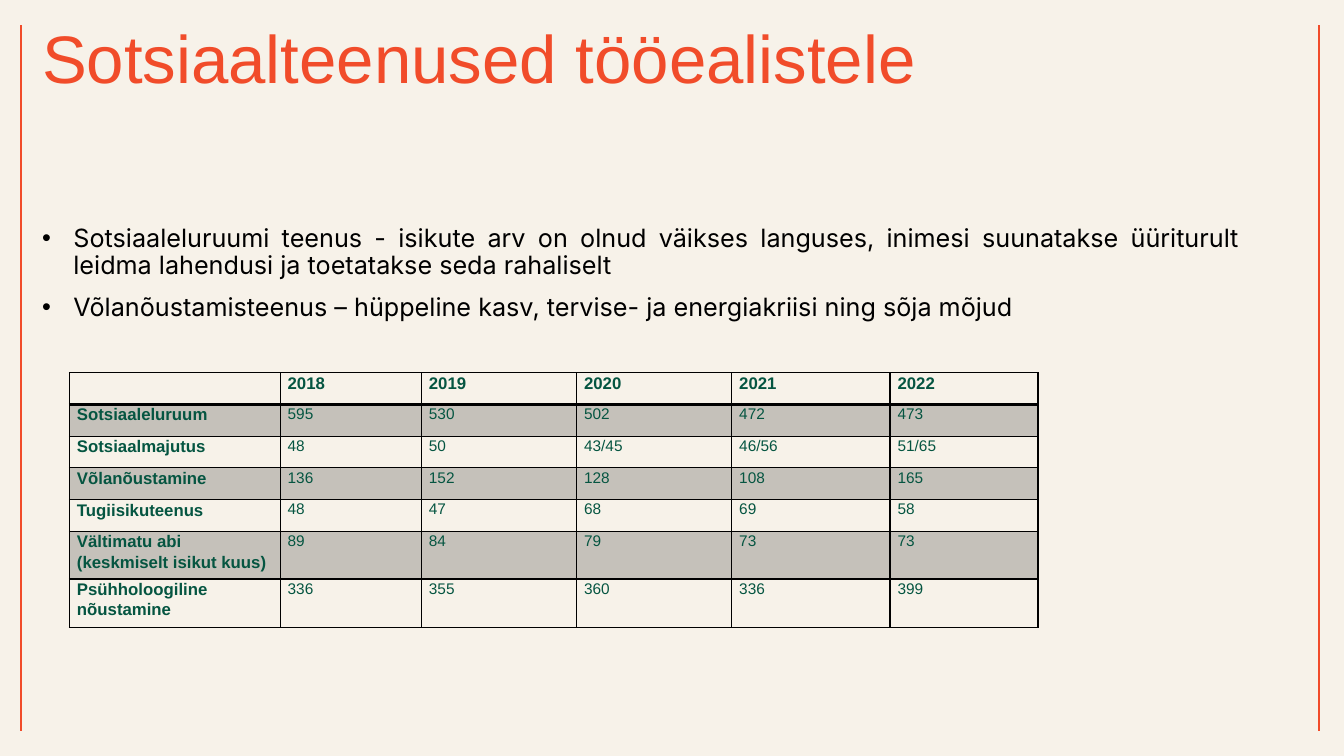
from pptx import Presentation
from pptx.dml.color import RGBColor
from pptx.enum.shapes import MSO_CONNECTOR as Connector
from pptx.enum.text import MSO_ANCHOR as Anchor, MSO_AUTO_SIZE as AutoSize, PP_ALIGN as Align
from pptx.oxml.ns import qn
from pptx.util import Cm, Pt
from lxml.etree import SubElement

TITLE = "Sotsiaalteenused tööealistele"
POINTS = [
    "Sotsiaaleluruumi teenus - isikute arv on olnud väikses languses, inimesi suunatakse "
    "üüriturult leidma lahendusi ja toetatakse seda rahaliselt",
    "Võlanõustamisteenus – hüppeline kasv, tervise- ja energiakriisi ning sõja mõjud",
]
SERVICES = [
    ("", "2018", "2019", "2020", "2021", "2022"),
    ("Sotsiaaleluruum", "595", "530", "502", "472", "473"),
    ("Sotsiaalmajutus", "48", "50", "43/45", "46/56", "51/65"),
    ("Võlanõustamine", "136", "152", "128", "108", "165"),
    ("Tugiisikuteenus", "48", "47", "68", "69", "58"),
    ("Vältimatu abi\n(keskmiselt isikut kuus)", "89", "84", "79", "73", "73"),
    ("Psühholoogiline nõustamine", "336", "355", "360", "336", "399"),
]
COLUMN_WIDTHS = [5.31, 3.56, 3.91, 3.91, 3.99, 3.73]
ROW_HEIGHTS = [0.8] * 5 + [1.2, 1.23]
CREAM, ORANGE, GREEN, BLACK = "F7F2E9", "F14C2A", "055541", "000000"


def color(value):
    return RGBColor.from_string(value)


def format_runs(para, name, size, value, bold=False):
    for span in para.runs:
        span.font.name = name
        span.font.size = Pt(size)
        span.font.bold = bold
        span.font.color.rgb = color(value)


def prepare_placeholder(box, left, top, width, height):
    box.left, box.top, box.width, box.height = Cm(left), Cm(top), Cm(width), Cm(height)
    frame = box.text_frame
    frame.word_wrap = True
    frame.auto_size = AutoSize.NONE
    frame.vertical_anchor = Anchor.TOP
    frame.margin_left = frame.margin_right = Cm(0.25)
    frame.margin_top = frame.margin_bottom = 0
    return frame


def add_bullet(para):
    properties = para._p.get_or_add_pPr()
    properties.set("marL", str(Cm(0.79)))
    properties.set("indent", str(Cm(-0.79)))
    bullet_color = SubElement(properties, qn("a:buClr"))
    SubElement(bullet_color, qn("a:srgbClr"), val=BLACK)
    SubElement(properties, qn("a:buFont"), typeface="Arial")
    SubElement(properties, qn("a:buChar"), char="•")


def add_border(cell, side, width):
    line = SubElement(cell._tc.get_or_add_tcPr(), qn(f"a:ln{side}"), w=str(Pt(width)))
    fill = SubElement(line, qn("a:solidFill"))
    SubElement(fill, qn("a:srgbClr"), val=BLACK)


def fill_cell(cell, shaded):
    if not shaded:
        cell.fill.background()
        return
    cell.fill.solid()
    cell.fill.fore_color.rgb = color(BLACK)
    shade = cell._tc.tcPr.find(qn("a:solidFill")).find(qn("a:srgbClr"))
    SubElement(shade, qn("a:alpha"), val="20000")


def add_side_line(page, x):
    line = page.shapes.add_connector(Connector.STRAIGHT, Cm(x), Cm(0.64), Cm(x), Cm(18.42))
    line.line.color.rgb = color(ORANGE)
    line.line.width = Pt(1.5)
    SubElement(line._element.spPr, qn("a:effectLst"))


def add_services_table(page):
    frame = page.shapes.add_table(
        len(SERVICES), len(COLUMN_WIDTHS), Cm(1.75), Cm(9.39),
        Cm(sum(COLUMN_WIDTHS)), Cm(sum(ROW_HEIGHTS)))
    table = frame.table
    table.first_row = table.horz_banding = False
    for column, width in zip(table.columns, COLUMN_WIDTHS):
        column.width = Cm(width)
    for row, height in zip(table.rows, ROW_HEIGHTS):
        row.height = Cm(height)
    for r, values in enumerate(SERVICES):
        for c, value in enumerate(values):
            cell = table.cell(r, c)
            cell.margin_left = cell.margin_right = Cm(0.19)
            cell.margin_top = cell.margin_bottom = 0
            heading = r == 0 or c == 0
            para = cell.text_frame.paragraphs[0]
            para.text = value
            para.line_spacing = 1.07
            para.space_after = Pt(8)
            format_runs(para, "Arial", 12 if heading else 11, GREEN, heading)
            for side in "LRTB":
                thick = (r, side) in ((0, "B"), (1, "T"))
                add_border(cell, side, 2 if thick else 1)
            fill_cell(cell, r % 2 == 1)


def main():
    deck = Presentation()
    deck.slide_width, deck.slide_height = Cm(33.87), Cm(19.05)
    page = deck.slides.add_slide(deck.slide_layouts[1])
    page.background.fill.solid()
    page.background.fill.fore_color.rgb = color(CREAM)

    for x in (0.53, 33.25):
        add_side_line(page, x)

    title = prepare_placeholder(page.shapes.title, 0.81, 0.64, 26.31, 5.77)
    title.text = TITLE
    para = title.paragraphs[0]
    para.alignment = Align.LEFT
    para.line_spacing = 0.9
    format_runs(para, "Arial", 48, ORANGE)

    body = prepare_placeholder(page.placeholders[1], 0.81, 5.69, 30.68, 12.73)
    body.text = "\n".join(POINTS)
    for index, para in enumerate(body.paragraphs):
        para.alignment = Align.JUSTIFY
        para.line_spacing = 0.9
        para.space_before = Pt(10 if index else 0)
        add_bullet(para)
        format_runs(para, "Inter", 18, BLACK)

    add_services_table(page)
    deck.save("out.pptx")


if __name__ == "__main__":
    main()
